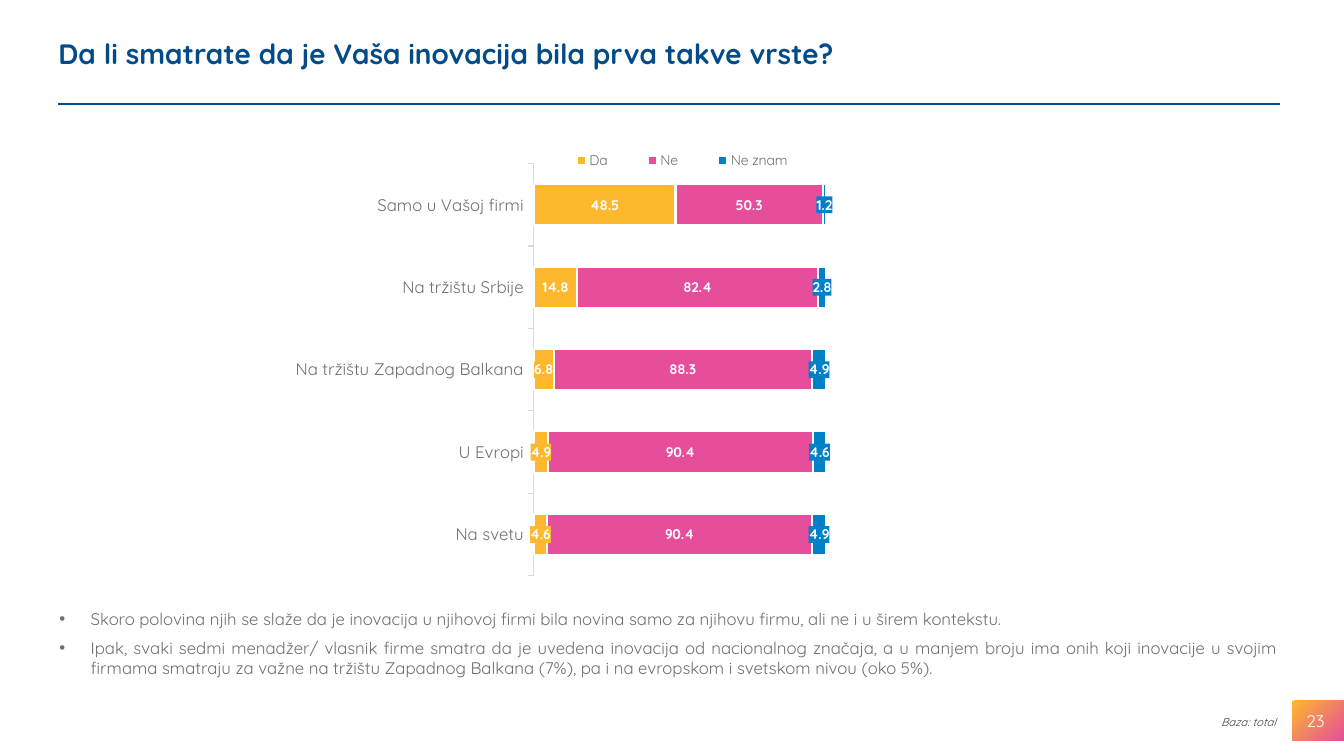
from dataclasses import dataclass
from lxml import etree
from pptx import Presentation
from pptx.chart.data import CategoryChartData
from pptx.dml.color import RGBColor
from pptx.enum.chart import XL_CHART_TYPE, XL_LEGEND_POSITION, XL_TICK_MARK
from pptx.enum.shapes import MSO_CONNECTOR, MSO_SHAPE
from pptx.enum.text import MSO_ANCHOR, PP_ALIGN
from pptx.oxml import parse_xml
from pptx.oxml.ns import nsdecls, qn
from pptx.util import Inches, Pt

WIDTH, HEIGHT = Inches(13.333), Inches(7.5)


@dataclass(frozen=True)
class Theme:
    font: str = "Quicksand"
    navy: str = "004B88"
    yellow: str = "FDB82E"
    pink: str = "E64E9C"
    blue: str = "0080C6"
    grey: str = "6E706E"
    dark: str = "404040"
    axis: str = "D9D9D9"
    white: str = "FFFFFF"
    title: int = 20
    body: int = 12
    label: int = 10
    note: int = 8


T = Theme()
CATEGORIES = ["Samo u Vašoj firmi", "Na tržištu Srbije",
              "Na tržištu Zapadnog Balkana", "U Evropi", "Na svetu"]
ANSWERS = [
    ("Da", T.yellow, [48.5, 14.8, 6.8, 4.9, 4.6]),
    ("Ne", T.pink, [50.3, 82.4, 88.3, 90.4, 90.4]),
    ("Ne znam", T.blue, [1.2, 2.8, 4.9, 4.6, 4.9]),
]
FINDINGS = [
    "Skoro polovina njih se slaže da je inovacija u njihovoj firmi bila novina "
    "samo za njihovu firmu, ali ne i u širem kontekstu.",
    "Ipak, svaki sedmi menadžer/ vlasnik firme smatra da je uvedena inovacija od "
    "nacionalnog značaja, a u manjem broju ima onih koji inovacije u svojim firmama "
    "smatraju za važne na tržištu Zapadnog Balkana (7%), pa i na evropskom i "
    "svetskom nivou (oko 5%).",
]


def rgb(color):
    return RGBColor.from_string(color)


def area(x, y, w, h):
    return (int(WIDTH * x / 100), int(HEIGHT * y / 100),
            int(WIDTH * w / 100), int(HEIGHT * h / 100))


def style(font, size, color, bold=False, italic=False):
    font.name, font.size = T.font, Pt(size)
    font.bold, font.italic = bold, italic
    font.color.rgb = rgb(color)


def add_text(s, box, lines, size, color, align=PP_ALIGN.LEFT, anchor=MSO_ANCHOR.TOP,
             left=0, right=0, bold=False, italic=False):
    tf = s.shapes.add_textbox(*area(*box)).text_frame
    tf.word_wrap = True
    tf.vertical_anchor = anchor
    tf.margin_left, tf.margin_right = Inches(left), Inches(right)
    tf.text = "\n".join(lines)
    for p in tf.paragraphs:
        p.alignment = align
        for r in p.runs:
            style(r.font, size, color, bold, italic)
    return tf


def add_bullets(tf):
    for p in tf.paragraphs:
        p.space_after = Pt(6)
        pPr = p._p.get_or_add_pPr()
        pPr.set("marL", str(Inches(0.31)))
        pPr.set("indent", str(-Inches(0.31)))
        etree.SubElement(pPr, qn("a:buFont")).set("typeface", "Arial")
        etree.SubElement(pPr, qn("a:buChar")).set("char", "•")


def add_rule(s, x1, x2, y):
    left, top, width, _ = area(x1, y, x2 - x1, 0)
    line = s.shapes.add_connector(MSO_CONNECTOR.STRAIGHT, left, top, left + width, top)
    line.line.color.rgb = rgb(T.navy)
    line.line.width = Pt(1.5)
    etree.SubElement(line._element.spPr, qn("a:effectLst"))


def add_badge(s, box):
    sp = s.shapes.add_shape(MSO_SHAPE.RECTANGLE, *area(*box))
    sp.shadow.inherit = False
    sp.line.fill.background()
    sp.fill.gradient()
    sp.fill.gradient_angle = 315
    for stop, color, position in zip(sp.fill.gradient_stops, (T.yellow, T.pink), (0, 1)):
        stop.color.rgb = rgb(color)
        stop.position = position


def manual_layout(x, y, w, h, inner=False):
    target = '<c:layoutTarget val="inner"/>' if inner else ""
    sizes = "".join(f'<c:{k} val="{v}"/>' for k, v in zip("xywh", (x, y, w, h)))
    return parse_xml(
        f'<c:layout {nsdecls("c")}><c:manualLayout>{target}<c:xMode val="edge"/>'
        f'<c:yMode val="edge"/>{sizes}</c:manualLayout></c:layout>')


def style_series(series, color):
    series.format.fill.solid()
    series.format.fill.fore_color.rgb = rgb(color)
    series.format.line.color.rgb = rgb(T.white)
    series.format.line.width = Pt(1.5)
    labels = series.data_labels
    labels.show_value = True
    labels.number_format = "#,##0.0"
    labels.number_format_is_linked = False
    style(labels.font, T.label, T.white, bold=True)
    labels._element.find(qn("c:txPr")).addprevious(parse_xml(
        f'<c:spPr {nsdecls("c", "a")}><a:solidFill><a:srgbClr val="{color}"/>'
        '</a:solidFill></c:spPr>'))


def add_answer_chart(s, box):
    data = CategoryChartData(number_format="#,##0.0")
    data.categories = CATEGORIES
    for name, _, values in ANSWERS:
        data.add_series(name, values)
    chart = s.shapes.add_chart(XL_CHART_TYPE.BAR_STACKED_100, *area(*box), data).chart
    style(chart.font, T.label, T.grey)
    chart.has_title = False
    plot = chart.plots[0]
    plot.gap_width, plot.overlap = 100, 100
    plot.vary_by_categories = False
    for series, (_, color, _) in zip(plot.series, ANSWERS):
        style_series(series, color)

    cat = chart.category_axis
    cat.reverse_order = True
    cat.major_tick_mark = XL_TICK_MARK.OUTSIDE
    cat.format.line.color.rgb = rgb(T.axis)
    cat.format.line.width = Pt(0.75)
    style(cat.tick_labels.font, T.body, T.grey)
    chart.value_axis.has_major_gridlines = False
    chart.value_axis.visible = False

    chart.has_legend = True
    legend = chart.legend
    legend.position = XL_LEGEND_POSITION.TOP
    legend.include_in_layout = False
    style(legend.font, T.label, T.grey)
    legend._element.find(qn("c:legendPos")).addnext(manual_layout(0.42, 0.02, 0.3, 0.06))
    plot_area = chart._chartSpace.chart.plotArea
    for old in plot_area.findall(qn("c:layout")):
        plot_area.remove(old)
    plot_area.insert(0, manual_layout(0.412, 0.056, 0.311, 0.87, inner=True))


def main():
    prs = Presentation()
    prs.slide_width, prs.slide_height = WIDTH, HEIGHT
    s = prs.slides.add_slide(prs.slide_layouts[6])
    add_rule(s, 4.35, 95.25, 13.73)
    add_badge(s, (96.15, 93.33 - 0.66, 3.85, 5.33))
    add_answer_chart(s, (10.88, 18.13, 69.98, 62.67))
    add_bullets(add_text(s, (4.43, 79.87, 90.68, 14.4), FINDINGS, T.body, T.grey,
                         PP_ALIGN.JUSTIFY))
    add_text(s, (76.8, 92.67, 22.5, 5.33), ["23"], T.body, T.white, PP_ALIGN.RIGHT,
             MSO_ANCHOR.MIDDLE, left=0.1, right=0.1)
    title = add_text(s, (4.35, 2.13, 92.1, 10.53),
                     ["Da li smatrate da je Vaša inovacija bila prva takve vrste?"],
                     T.title, T.navy, anchor=MSO_ANCHOR.MIDDLE, right=0.1, bold=True)
    title.paragraphs[0].line_spacing = 0.9
    add_text(s, (87.6, 94, 7.35, 3.2), ["Baza: total"], T.note, T.dark,
             PP_ALIGN.RIGHT, italic=True)
    prs.save("out.pptx")


if __name__ == "__main__":
    main()
